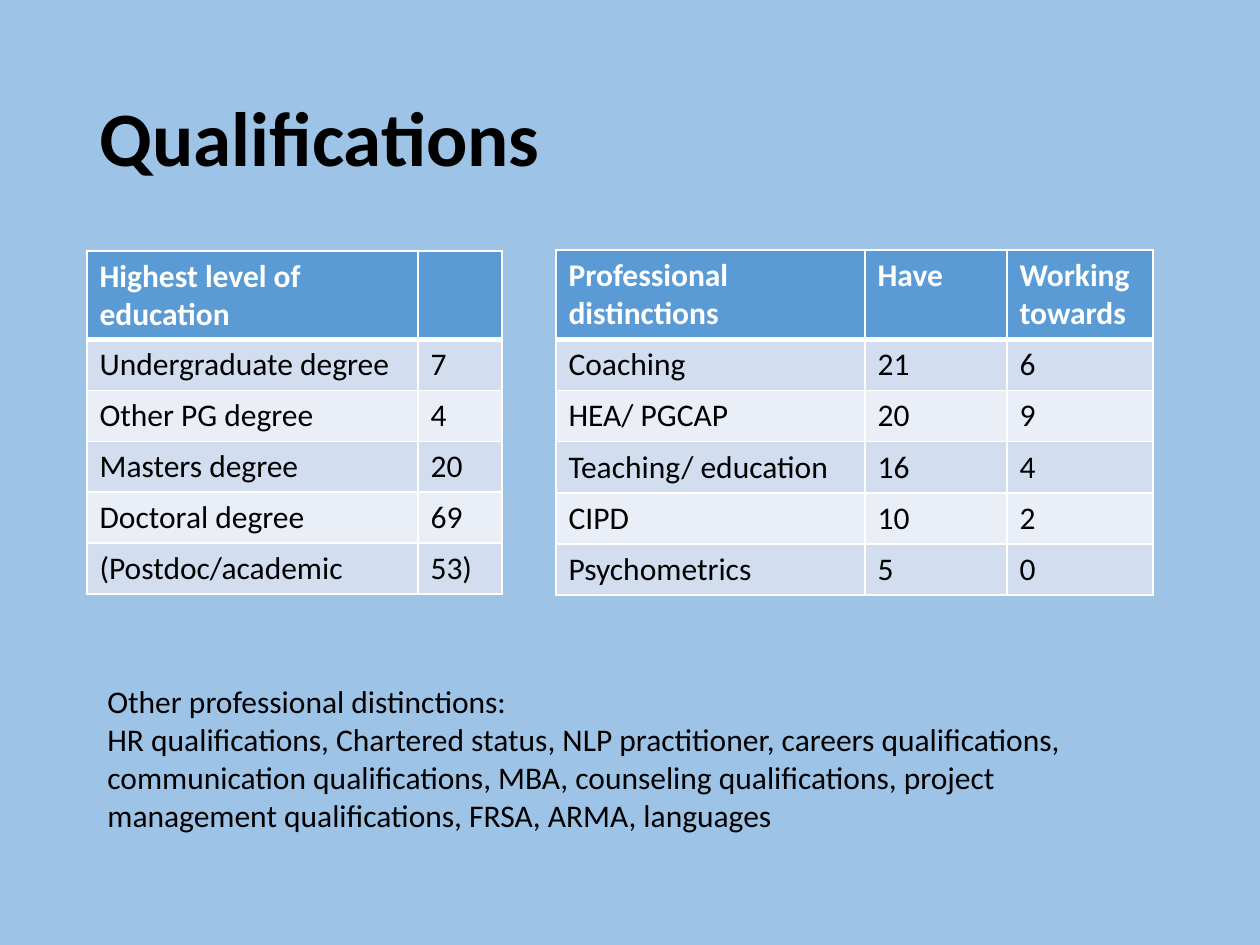
from dataclasses import dataclass

from lxml import etree
from pptx import Presentation
from pptx.dml.color import RGBColor
from pptx.enum.text import MSO_ANCHOR, PP_ALIGN
from pptx.oxml.ns import qn
from pptx.util import Pt

PX = 914400 / 126
LEFT = PP_ALIGN.LEFT
MIDDLE = MSO_ANCHOR.MIDDLE
TITLE_ONLY = 5


@dataclass(frozen=True)
class Theme:
    font: str = "Calibri"
    background: str = "9DC3E6"
    ink: str = "000000"
    white: str = "FFFFFF"
    header: str = "5B9BD5"
    bands: tuple[str, str] = ("D2DEEF", "EAEFF7")
    title_size: int = 44
    body_size: int = 18
    thin: int = 1
    thick: int = 3


@dataclass(frozen=True)
class Box:
    left: int
    top: int
    width: int
    height: int

    def emu(self) -> tuple[int, ...]:
        return tuple(px(v) for v in (self.left, self.top, self.width, self.height))


@dataclass(frozen=True)
class DataTable:
    left: int
    top: int
    columns: tuple[int, ...]
    rows: tuple[tuple[str, ...], ...]


THEME = Theme()
HEADER_HEIGHT, ROW_HEIGHT = 88, 51

EDUCATION = DataTable(87, 251, (331, 84), (
    ("Highest level of education", ""),
    ("Undergraduate degree", "7"),
    ("Other PG degree", "4"),
    ("Masters degree", "20"),
    ("Doctoral degree", "69"),
    ("(Postdoc/academic", "53)"),
))
DISTINCTIONS = DataTable(556, 250, (309, 142, 146), (
    ("Professional distinctions", "Have", "Working towards"),
    ("Coaching", "21", "6"),
    ("HEA/ PGCAP", "20", "9"),
    ("Teaching/ education", "16", "4"),
    ("CIPD", "10", "2"),
    ("Psychometrics", "5", "0"),
))
OTHER_DISTINCTIONS = (
    "Other professional distinctions:",
    "HR qualifications, Chartered status, NLP practitioner, careers qualifications, "
    "communication qualifications, MBA, counseling qualifications, project "
    "management qualifications, FRSA, ARMA, languages",
)


def px(value: int) -> int:
    return round(value * PX)


def write(paragraph, text: str, color: str, size: int, bold: bool = False) -> None:
    paragraph.alignment = LEFT
    paragraph.text = text
    font = paragraph.font if not text else paragraph.runs[0].font
    for key, value in {"name": THEME.font, "size": Pt(size), "bold": bold}.items():
        setattr(font, key, value)
    font.color.rgb = RGBColor.from_string(color)


def add_borders(cell, top: int, bottom: int) -> None:
    properties = cell._tc.get_or_add_tcPr()
    widths = {"a:lnL": THEME.thin, "a:lnR": THEME.thin, "a:lnT": top, "a:lnB": bottom}
    for tag, width in widths.items():
        line = etree.SubElement(properties, qn(tag), w=str(Pt(width)))
        fill = etree.SubElement(line, qn("a:solidFill"))
        etree.SubElement(fill, qn("a:srgbClr"), val=THEME.white)


def add_data_table(slide, data: DataTable) -> None:
    body_count = len(data.rows) - 1
    box = Box(data.left, data.top, sum(data.columns),
              HEADER_HEIGHT + ROW_HEIGHT * body_count)
    table = slide.shapes.add_table(
        len(data.rows), len(data.columns), *box.emu()).table
    for column, width in zip(table.columns, data.columns):
        column.width = px(width)
    for r, values in enumerate(data.rows):
        is_header = r == 0
        table.rows[r].height = px(HEADER_HEIGHT if is_header else ROW_HEIGHT)
        band = THEME.header if is_header else THEME.bands[(r - 1) % 2]
        for c, value in enumerate(values):
            cell = table.cell(r, c)
            add_borders(cell, THEME.thick if r == 1 else THEME.thin,
                        THEME.thick if is_header else THEME.thin)
            cell.fill.solid()
            cell.fill.fore_color.rgb = RGBColor.from_string(band)
            write(cell.text_frame.paragraphs[0], value,
                  THEME.white if is_header else THEME.ink,
                  THEME.body_size, is_header)


def add_title(slide, text: str, box: Box) -> None:
    title = slide.shapes.title
    for key, value in zip(("left", "top", "width", "height"), box.emu()):
        setattr(title, key, value)
    title.text_frame.vertical_anchor = MIDDLE
    heading = title.text_frame.paragraphs[0]
    heading.line_spacing = 0.9
    write(heading, text, THEME.ink, THEME.title_size, True)


def add_note(slide, lines: tuple[str, ...], box: Box) -> None:
    frame = slide.shapes.add_textbox(*box.emu()).text_frame
    frame.word_wrap = True
    for i, line in enumerate(lines):
        paragraph = frame.add_paragraph() if i else frame.paragraphs[0]
        write(paragraph, line, THEME.ink, THEME.body_size)


def main() -> None:
    deck = Presentation()
    deck.slide_width, deck.slide_height = px(1260), px(945)
    slide = deck.slides.add_slide(deck.slide_layouts[TITLE_ONLY])
    slide.background.fill.solid()
    slide.background.fill.fore_color.rgb = RGBColor.from_string(THEME.background)

    # Heading
    add_title(slide, "Qualifications", Box(87, 50, 1086, 183))

    # Tables and the remaining distinctions
    add_data_table(slide, DISTINCTIONS)
    add_note(slide, OTHER_DISTINCTIONS, Box(95, 676, 1065, 165))
    add_data_table(slide, EDUCATION)

    deck.save("out.pptx")


if __name__ == "__main__":
    main()
